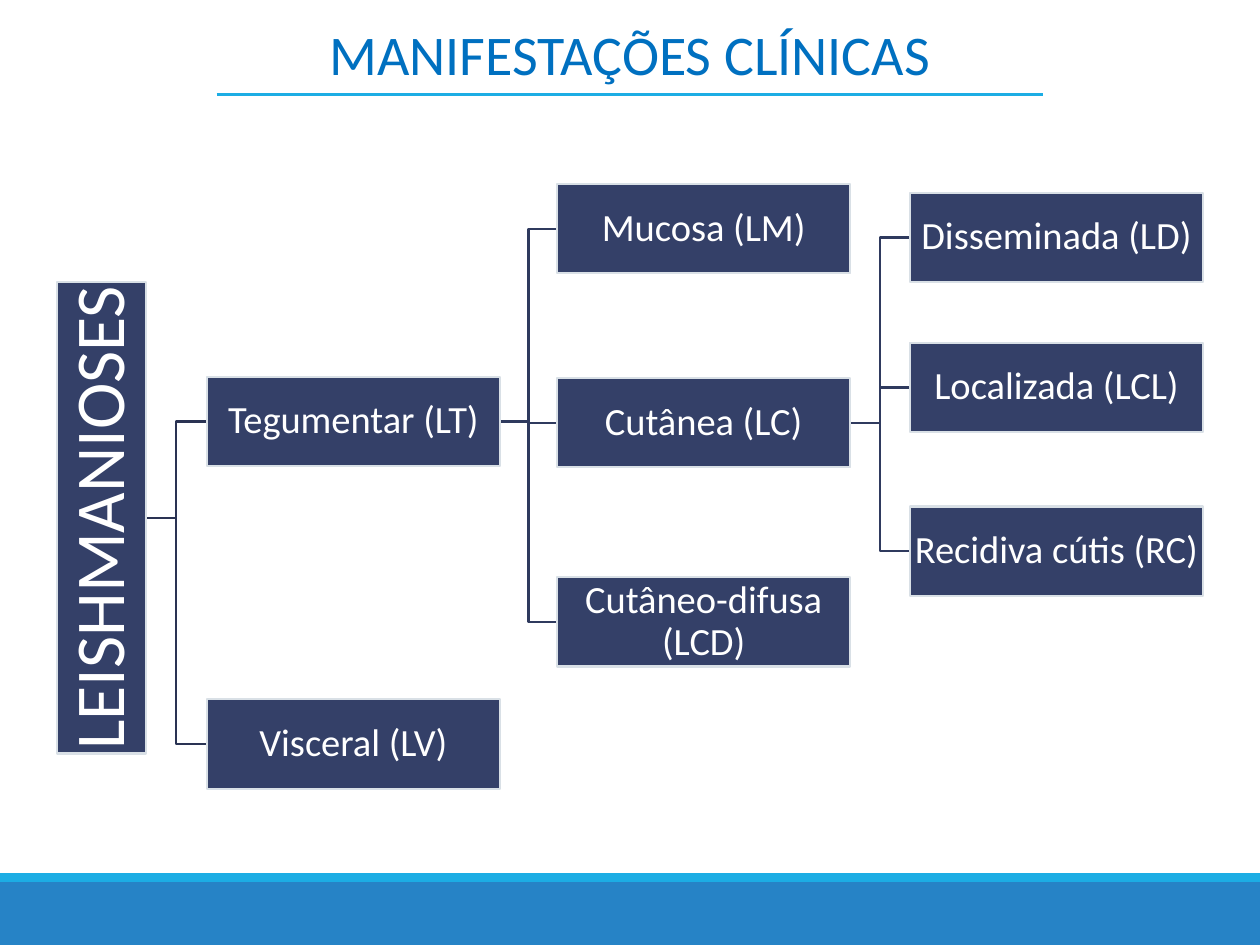
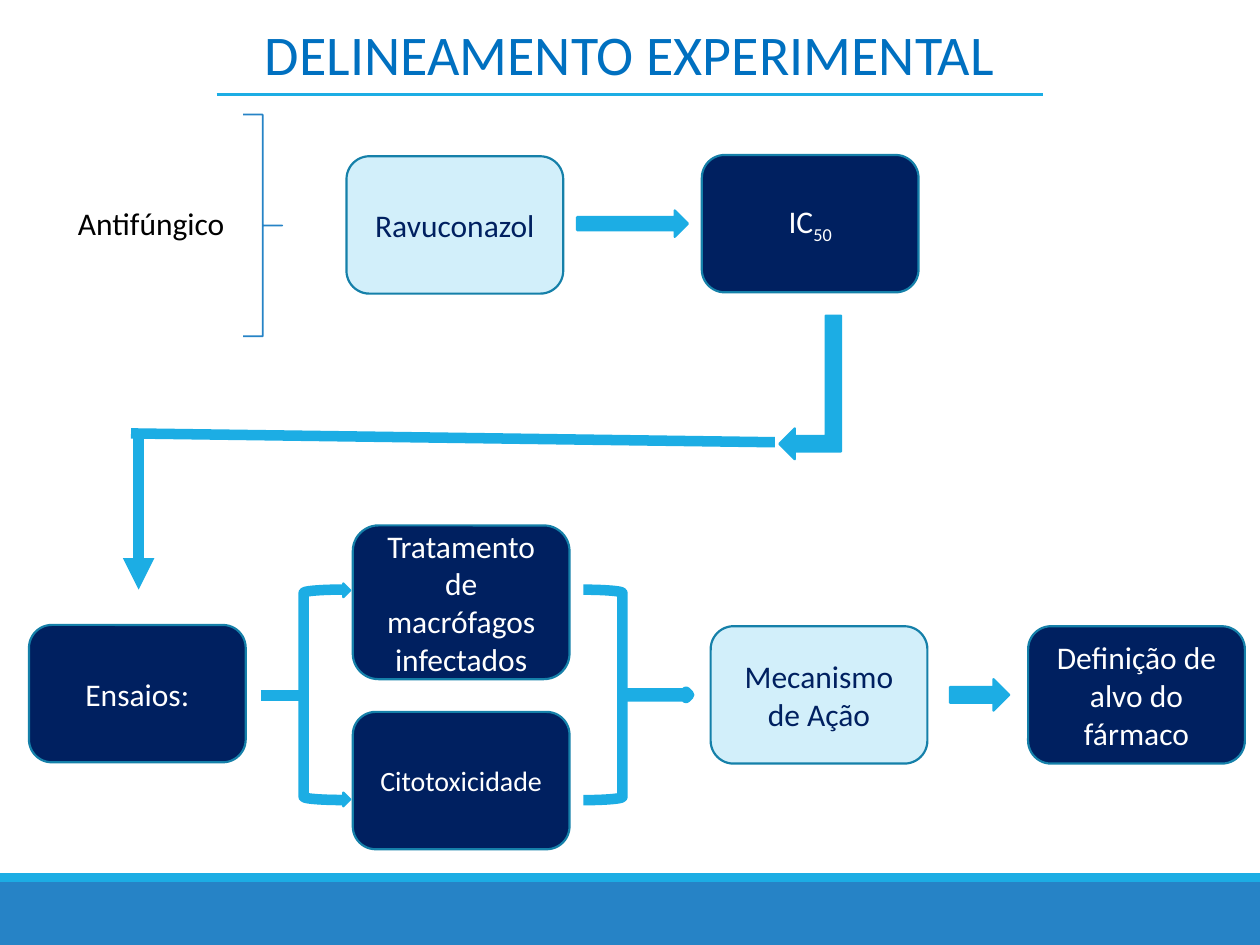
from dataclasses import dataclass
from typing import Optional

from lxml import etree
from pptx import Presentation
from pptx import util as u
from pptx.dml.color import RGBColor
from pptx.enum import shapes, text
from pptx.oxml import ns

Inches = u.Inches
Preset = shapes.MSO_SHAPE
FONT = "Calibri"
COLORS = {
    "title": "0070C0", "accent": "1CADE4", "band": "2683C6",
    "node": "344068", "node_edge": "D9E0E6",
    "root_link": "2A3353", "link": "2F3A5E",
    "navy": "002060", "pale": "D2EFFA", "step_edge": "1580A9",
    "white": "FFFFFF", "black": "000000",
}
LEVEL_LEFT = (0.45, 1.64, 4.42, 7.22)
NODE_WIDTH, NODE_HEIGHT, ROOT_HEIGHT = 2.33, 0.71, 3.74
STEP_WIDTH, STEP_HEIGHT = 1.72, 1.09


@dataclass(frozen=True)
class Node:
    label: str
    level: int
    top: float
    parent: Optional["Node"] = None

    @property
    def width(self) -> float:
        return NODE_WIDTH if self.parent else NODE_HEIGHT

    @property
    def height(self) -> float:
        return NODE_HEIGHT if self.parent else ROOT_HEIGHT

    @property
    def left(self) -> float:
        return LEVEL_LEFT[self.level]

    @property
    def middle(self) -> float:
        return self.top + self.height / 2


@dataclass(frozen=True)
class Step:
    label: str
    left: float
    top: float
    height: float = STEP_HEIGHT
    pale: bool = False
    size: int = 18
    subscript: str = ""


@dataclass(frozen=True)
class Mark:
    """An arrow, bracket or brace without text."""
    preset: Preset
    left: float
    top: float
    width: float
    height: float
    filled: bool = True
    color: str = "accent"
    weight: float = 1.25
    rotation: int = 0
    flip: str = ""
    adjustments: tuple = ()


@dataclass(frozen=True)
class Stroke:
    start: tuple
    end: tuple
    weight: float = 6
    arrow: bool = False


ROOT = Node("LEISHMANIOSES", 0, 2.24)
TEGUMENTAR = Node("Tegumentar (LT)", 1, 2.99, ROOT)
CUTANEA = Node("Cutânea (LC)", 2, 3, TEGUMENTAR)
NODES = (
    ROOT, TEGUMENTAR, CUTANEA,
    Node("Visceral (LV)", 1, 5.55, ROOT),
    Node("Mucosa (LM)", 2, 1.46, TEGUMENTAR),
    Node("Cutâneo-difusa (LCD)", 2, 4.58, TEGUMENTAR),
    Node("Disseminada (LD)", 3, 1.53, CUTANEA),
    Node("Localizada (LCL)", 3, 2.72, CUTANEA),
    Node("Recidiva cútis (RC)", 3, 4.02, CUTANEA),
)
STEPS = (
    Step("Ravuconazol", 2.75, 1.24, pale=True),
    Step("IC", 5.57, 1.23, subscript="50"),
    Step("Ensaios:", 0.23, 4.96),
    Step("Tratamento de macrófagos infectados", 2.8, 4.17, height=1.22),
    Step("Citotoxicidade", 2.8, 5.65, size=16),
    Step("Mecanismo de Ação", 5.64, 4.97, pale=True),
    Step("Definição de alvo do fármaco", 8.16, 4.97),
)
MARKS = (
    Mark(Preset.RIGHT_BRACE, 1.93, 0.91, 0.31, 1.76, filled=False,
         color="band", weight=1, adjustments=(0, 0.5)),
    Mark(Preset.RIGHT_ARROW, 4.58, 1.67, 0.88, 0.21),
    Mark(Preset.BENT_UP_ARROW, 5.86, 2.83, 1.14, 0.49, rotation=270, flip="flipH"),
    Mark(Preset.LEFT_BRACKET, 2.41, 4.68, 0.31, 1.67, filled=False, weight=6),
    Mark(Preset.RIGHT_ARROW, 2.52, 4.63, 0.26, 0.11),
    Mark(Preset.RIGHT_ARROW, 2.52, 6.29, 0.26, 0.11),
    Mark(Preset.LEFT_BRACKET, 4.63, 4.68, 0.31, 1.67, filled=False, weight=6,
         rotation=180),
    Mark(Preset.RIGHT_ARROW, 4.94, 5.49, 0.53, 0.05, weight=6, flip="flipV"),
    Mark(Preset.RIGHT_ARROW, 7.54, 5.39, 0.47, 0.25),
)
STROKES = (
    Stroke((2.07, 5.52), (2.41, 5.52)),
    Stroke((1.1, 3.43), (1.1, 4.68), arrow=True),
    Stroke((6.15, 3.51), (1.04, 3.44)),
)


def rgb(name: str) -> RGBColor:
    return RGBColor.from_string(COLORS[name])


def paint(shape, fill: Optional[str], line: Optional[str], weight: float = 1.25) -> None:
    shape.shadow.inherit = False
    if fill:
        shape.fill.solid()
        shape.fill.fore_color.rgb = rgb(fill)
    else:
        shape.fill.background()
    if line:
        shape.line.color.rgb = rgb(line)
        shape.line.width = u.Pt(weight)
    else:
        shape.line.fill.background()


def add_box(slide, preset: Preset, left: float, top: float, width: float,
            height: float, fill: Optional[str], line: Optional[str] = None,
            weight: float = 1.25):
    box = slide.shapes.add_shape(preset, Inches(left), Inches(top),
                                 Inches(width), Inches(height))
    paint(box, fill, line, weight)
    return box


def write(shape, content: str, *, size: float = 18, color: str = "white",
          align=text.PP_ALIGN.CENTER, anchor=text.MSO_ANCHOR.MIDDLE,
          inset: Optional[float] = None, spacing: Optional[float] = None,
          subscript: str = "", wrap: bool = True) -> None:
    frame = shape.text_frame
    frame.word_wrap = wrap
    frame.vertical_anchor = anchor
    if inset is not None:
        frame.margin_left = frame.margin_right = Inches(inset)
        frame.margin_top = frame.margin_bottom = Inches(inset)
    paragraph = frame.paragraphs[0]
    paragraph.alignment = align
    if spacing:
        paragraph.line_spacing = spacing
    for part in filter(None, (content, subscript)):
        run = paragraph.add_run()
        run.text = part
        run.font.name = FONT
        run.font.size = u.Pt(size)
        run.font.color.rgb = rgb(color)
    if subscript:
        run.font._element.set("baseline", "-25000")


def add_label(slide, content: str, left: float, top: float, width: float,
              height: float, **style) -> None:
    label = slide.shapes.add_textbox(Inches(left), Inches(top),
                                     Inches(width), Inches(height))
    write(label, content, anchor=text.MSO_ANCHOR.TOP, **style)


def draw_stroke(slide, stroke: Stroke) -> None:
    ends = [Inches(value) for value in (*stroke.start, *stroke.end)]
    connector = slide.shapes.add_connector(shapes.MSO_CONNECTOR.STRAIGHT, *ends)
    connector.line.color.rgb = rgb("accent")
    connector.line.width = u.Pt(stroke.weight)
    properties = connector._element.spPr
    if stroke.arrow:
        outline = properties.find(ns.qn("a:ln"))
        etree.SubElement(outline, ns.qn("a:tailEnd"), type="triangle")
    etree.SubElement(properties, ns.qn("a:effectLst"))


def draw_branch(slide, node: Node) -> None:
    """Draw the elbow from the parent's right side to the node's left side."""
    parent = node.parent
    start = parent.left + parent.width
    bend = (start + node.left) / 2
    points = [(Inches(x), Inches(y)) for x, y in (
        (start, parent.middle), (bend, parent.middle),
        (bend, node.middle), (node.left, node.middle))]
    builder = slide.shapes.build_freeform(*points[0])
    builder.add_line_segments(points[1:], close=False)
    paint(builder.convert_to_shape(), None, "link" if parent.parent else "root_link")


def draw_node(slide, node: Node) -> None:
    width, height = node.width, node.height
    if not node.parent:
        width, height = height, width
    left = node.left + (node.width - width) / 2
    box = add_box(slide, Preset.RECTANGLE, left, node.middle - height / 2,
                  width, height, "node", "node_edge")
    if node.parent:
        write(box, node.label, size=22, inset=0.02, spacing=0.9)
    else:
        box.rotation = 270
        write(box, node.label, size=40, inset=0, spacing=0.9, wrap=False)


def draw_step(slide, step: Step) -> None:
    fill, ink = ("pale", "navy") if step.pale else ("navy", "white")
    box = add_box(slide, Preset.ROUNDED_RECTANGLE, step.left, step.top,
                  STEP_WIDTH, step.height, fill, "step_edge")
    write(box, step.label, size=step.size, color=ink, subscript=step.subscript)


def draw_mark(slide, mark: Mark) -> None:
    shape = add_box(slide, mark.preset, mark.left, mark.top, mark.width, mark.height,
                    mark.color if mark.filled else None, mark.color, mark.weight)
    shape.rotation = mark.rotation
    for index, value in enumerate(mark.adjustments):
        shape.adjustments[index] = value
    if mark.flip:
        shape._element.spPr.find(ns.qn("a:xfrm")).set(mark.flip, "1")


def add_titled_slide(deck, title: str):
    slide = deck.slides.add_slide(deck.slide_layouts[6])
    add_box(slide, Preset.RECTANGLE, 0, 7, 10, 0.5, "band")
    add_box(slide, Preset.RECTANGLE, 0, 6.93, 10, 0.07, "accent")
    add_label(slide, title, 0, 0.11, 10, 0.64, size=32, color="title")
    draw_stroke(slide, Stroke((1.72, 0.75), (8.28, 0.75), 2.25))
    return slide


def main() -> None:
    deck = Presentation()
    deck.slide_width, deck.slide_height = Inches(10), Inches(7.5)

    manifestations = add_titled_slide(deck, "MANIFESTAÇÕES CLÍNICAS")
    for node in NODES:
        if node.parent:
            draw_branch(manifestations, node)
    for node in NODES:
        draw_node(manifestations, node)

    design = add_titled_slide(deck, "DELINEAMENTO EXPERIMENTAL")
    for step in STEPS:
        draw_step(design, step)
    for mark in MARKS:
        draw_mark(design, mark)
    for stroke in STROKES:
        draw_stroke(design, stroke)
    add_label(design, "Antifúngico", 0.52, 1.57, 1.89, 0.4, color="black",
              align=text.PP_ALIGN.LEFT)

    deck.save("out.pptx")


if __name__ == "__main__":
    main()
